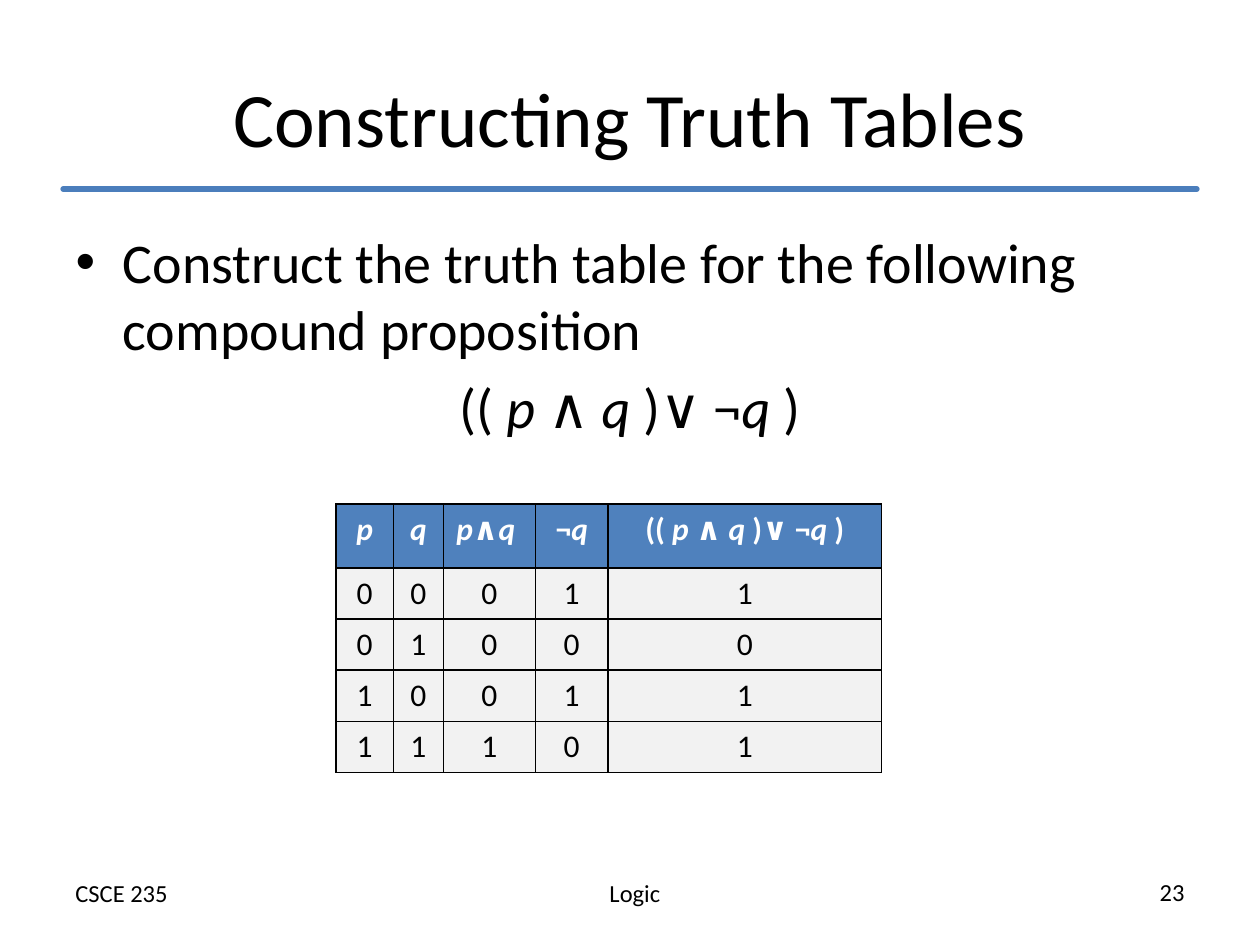
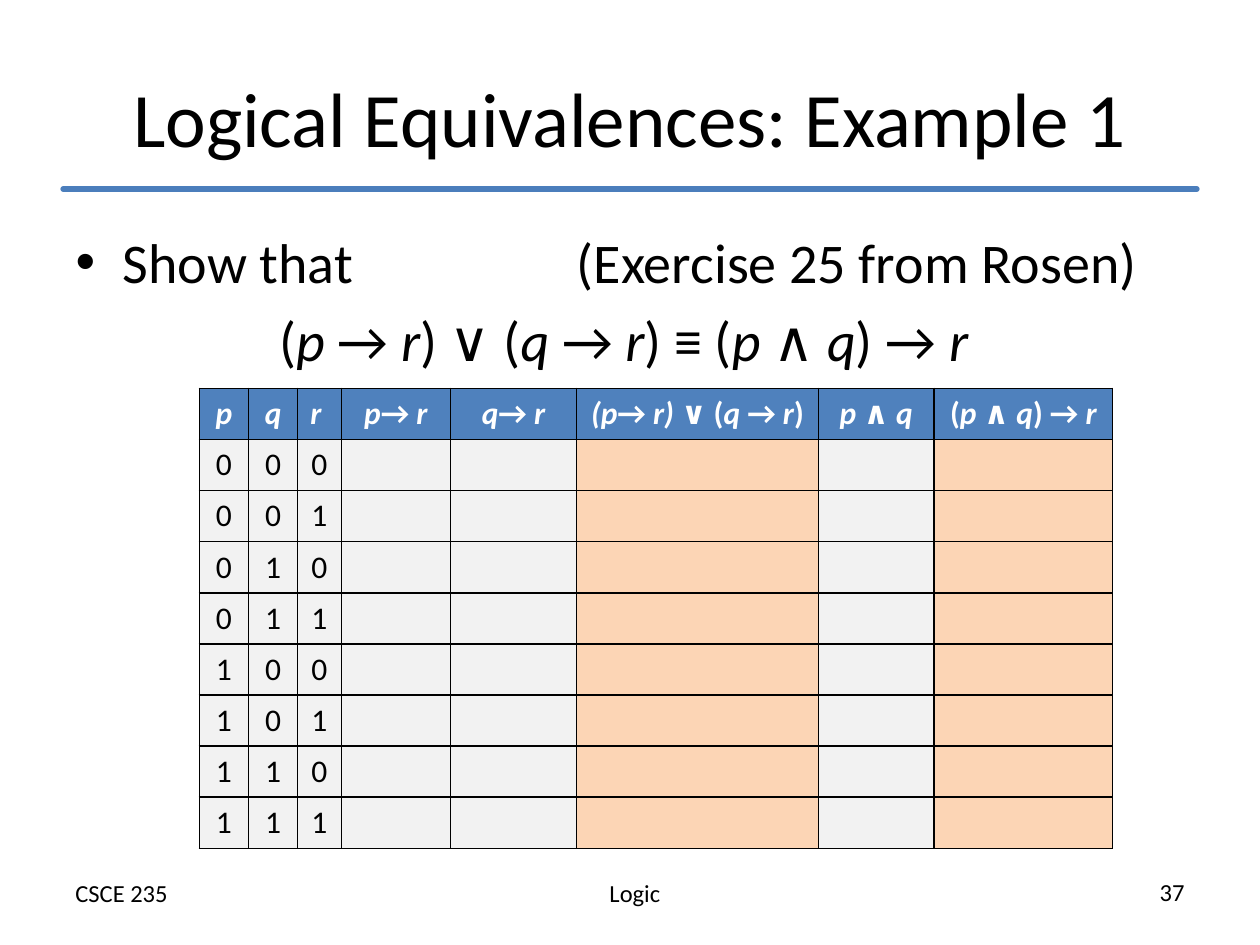
from dataclasses import dataclass
from itertools import product
from typing import Optional

from lxml.etree import SubElement
from pptx import Presentation
from pptx.dml.color import RGBColor
from pptx.enum.shapes import MSO_CONNECTOR
from pptx.enum.text import MSO_ANCHOR, PP_ALIGN as Align
from pptx.oxml.ns import qn
from pptx.util import Cm, Pt

BLACK = RGBColor(0x00, 0x00, 0x00)
WHITE = RGBColor(0xFF, 0xFF, 0xFF)
RULE_BLUE = RGBColor(0x4B, 0x7E, 0xBC)
HEADER_BLUE = RGBColor(0x4F, 0x81, 0xBD)
CELL_GREY = RGBColor(0xF2, 0xF2, 0xF2)
COMPARED_ORANGE = RGBColor(0xFC, 0xD5, 0xB5)

FONT = "Calibri"
TITLE_SIZE, BODY_SIZE, TABLE_SIZE, FOOTER_SIZE = Pt(44), Pt(32), Pt(18), Pt(14)
MARGIN, CONTENT_WIDTH = Cm(1.27), Cm(22.86)
HANGING = Cm(0.95)
ROW_HEIGHT = Cm(1.03)


@dataclass
class FooterPart:
    left: float
    top: float
    align: Align
    text: str


@dataclass
class Column:
    """A truth-table column; asterisks in the heading switch italics on and off."""
    heading: str
    width: float
    fill: RGBColor = CELL_GREY


@dataclass
class TruthTable:
    left: float
    top: float
    header_height: int
    columns: list[Column]
    rows: list[tuple]


@dataclass
class LogicSlide:
    number: int
    title: str
    task: str
    formula: str
    table: TruthTable
    right_tab: Optional[int] = None


def add_run(paragraph, text: str, size: int, color: RGBColor = BLACK,
            bold: bool = False, italic: bool = False) -> None:
    run = paragraph.add_run()
    run.text = text
    font = run.font
    font.name, font.size, font.bold, font.italic = FONT, size, bold, italic
    font.color.rgb = color


def add_formula(paragraph, formula: str, size: int, color: RGBColor = BLACK,
                bold: bool = False) -> None:
    """Write a formula whose parts between asterisks are italic."""
    paragraph.alignment = Align.CENTER
    for index, part in enumerate(formula.split("*")):
        if part:
            add_run(paragraph, part, size, color, bold, italic=index % 2 == 1)


def format_list_paragraph(paragraph, bullet: bool, right_tab: Optional[int]) -> None:
    props = paragraph._p.get_or_add_pPr()
    props.set("marL", str(HANGING))
    props.set("indent", str(-HANGING))
    spacing = SubElement(SubElement(props, qn("a:spcBef")), qn("a:spcPct"))
    spacing.set("val", "20000")
    if bullet:
        SubElement(props, qn("a:buFont")).set("typeface", "Arial")
        SubElement(props, qn("a:buChar")).set("char", "•")
    else:
        SubElement(props, qn("a:buNone"))
    if right_tab:
        tab = SubElement(SubElement(props, qn("a:tabLst")), qn("a:tab"))
        tab.set("pos", str(right_tab))
        tab.set("algn", "r")


def place(shape, left: int, top: int, width: int, height: int) -> None:
    shape.left, shape.top, shape.width, shape.height = left, top, width, height


def add_title_rule(slide) -> None:
    y = Cm(3.81)
    rule = slide.shapes.add_connector(
        MSO_CONNECTOR.STRAIGHT, MARGIN, y, MARGIN + CONTENT_WIDTH, y)
    rule.line.color.rgb = RULE_BLUE
    rule.line.width = Pt(3)
    properties = rule.element.spPr
    properties.find(qn("a:ln")).set("cap", "rnd")
    SubElement(properties, qn("a:effectLst"))


def add_footer(slide, number: int) -> None:
    parts = [
        FooterPart(9.09, 17.58, Align.CENTER, "Logic"),
        FooterPart(1.27, 17.58, Align.LEFT, "CSCE 235"),
        FooterPart(16.71, 17.55, Align.RIGHT, str(number)),
    ]
    for part in parts:
        box = slide.shapes.add_textbox(Cm(part.left), Cm(part.top), Cm(7.42), Cm(0.86))
        box.text_frame.word_wrap = True
        paragraph = box.text_frame.paragraphs[0]
        paragraph.alignment = part.align
        add_run(paragraph, part.text, FOOTER_SIZE)


def style_cell(cell, fill: RGBColor) -> None:
    """Give the cell thin black borders and a plain fill."""
    props = cell._tc.get_or_add_tcPr()
    for side in ("lnL", "lnR", "lnT", "lnB"):
        border = SubElement(props, qn(f"a:{side}"), w=str(Pt(1)))
        color = SubElement(SubElement(border, qn("a:solidFill")), qn("a:srgbClr"))
        color.set("val", str(BLACK))
    cell.fill.solid()
    cell.fill.fore_color.rgb = fill


def add_truth_table(slide, spec: TruthTable) -> None:
    widths = [Cm(column.width) for column in spec.columns]
    height = spec.header_height + ROW_HEIGHT * len(spec.rows)
    table = slide.shapes.add_table(
        len(spec.rows) + 1, len(widths), Cm(spec.left), Cm(spec.top),
        sum(widths), height).table
    for row in table.rows:
        row.height = ROW_HEIGHT
    table.rows[0].height = spec.header_height

    for col, column in enumerate(spec.columns):
        table.columns[col].width = widths[col]
        header = table.cell(0, col)
        style_cell(header, HEADER_BLUE)
        add_formula(header.text_frame.paragraphs[0], column.heading,
                    TABLE_SIZE, WHITE, bold=True)
        for row, values in enumerate(spec.rows, start=1):
            cell = table.cell(row, col)
            style_cell(cell, column.fill)
            if col < len(values):
                add_formula(cell.text_frame.paragraphs[0], str(values[col]), TABLE_SIZE)


def add_logic_slide(prs, spec: LogicSlide) -> None:
    slide = prs.slides.add_slide(prs.slide_layouts[1])
    add_footer(slide, spec.number)
    add_title_rule(slide)

    title = slide.shapes.title
    place(title, MARGIN, Cm(0.76), CONTENT_WIDTH, Cm(3.18))
    title.text_frame.vertical_anchor = MSO_ANCHOR.MIDDLE
    heading = title.text_frame.paragraphs[0]
    heading.alignment = Align.CENTER
    add_run(heading, spec.title, TITLE_SIZE)

    body = slide.placeholders[1]
    place(body, MARGIN, Cm(4.45), CONTENT_WIDTH, Cm(12.57))
    task = body.text_frame.paragraphs[0]
    format_list_paragraph(task, True, spec.right_tab)
    add_run(task, spec.task, BODY_SIZE)
    formula = body.text_frame.add_paragraph()
    format_list_paragraph(formula, False, spec.right_tab)
    add_formula(formula, spec.formula, BODY_SIZE)

    add_truth_table(slide, spec.table)


def compound_rows() -> list[tuple]:
    return [(p, q, p & q, 1 - q, (p & q) | (1 - q))
            for p, q in product((0, 1), repeat=2)]


COMPOUND = "(( *p *∧ *q* )∨ ¬*q* )"

SLIDES = [
    LogicSlide(
        23, "Constructing Truth Tables",
        "Construct the truth table for the following compound proposition",
        COMPOUND,
        TruthTable(6.77, 10.16, Cm(1.29), [
            Column("*p*", 1.16),
            Column("*q*", 1.01),
            Column("*p*∧*q *", 1.85),
            Column("¬*q*", 1.47),
            Column(COMPOUND, 5.51),
        ], compound_rows()),
    ),
    LogicSlide(
        37, "Logical Equivalences: Example 1",
        "Show that \t(Exercise 25 from Rosen)",
        "(*p *→ *r*) ∨ (*q *→ *r*) ≡ (*p *∧ *q*) → *r *",
        TruthTable(4.02, 7.83, ROW_HEIGHT, [
            Column("*p*", 0.99),
            Column("*q*", 0.99),
            Column("*r *", 0.88),
            Column("*p*→ *r*", 2.2),
            Column("*q*→ *r*", 2.54),
            Column("*(p*→ *r)* ∨ (*q *→ *r*)", 4.88, COMPARED_ORANGE),
            Column("*p *∧ *q*", 2.33),
            Column("(*p *∧ *q*) → *r *", 3.6, COMPARED_ORANGE),
        ], list(product((0, 1), repeat=3))),
        right_tab=Cm(22.07),
    ),
]


def main() -> None:
    prs = Presentation()
    prs.slide_width, prs.slide_height = Cm(25.4), Cm(19.05)
    for spec in SLIDES:
        add_logic_slide(prs, spec)
    prs.save("out.pptx")


if __name__ == "__main__":
    main()
